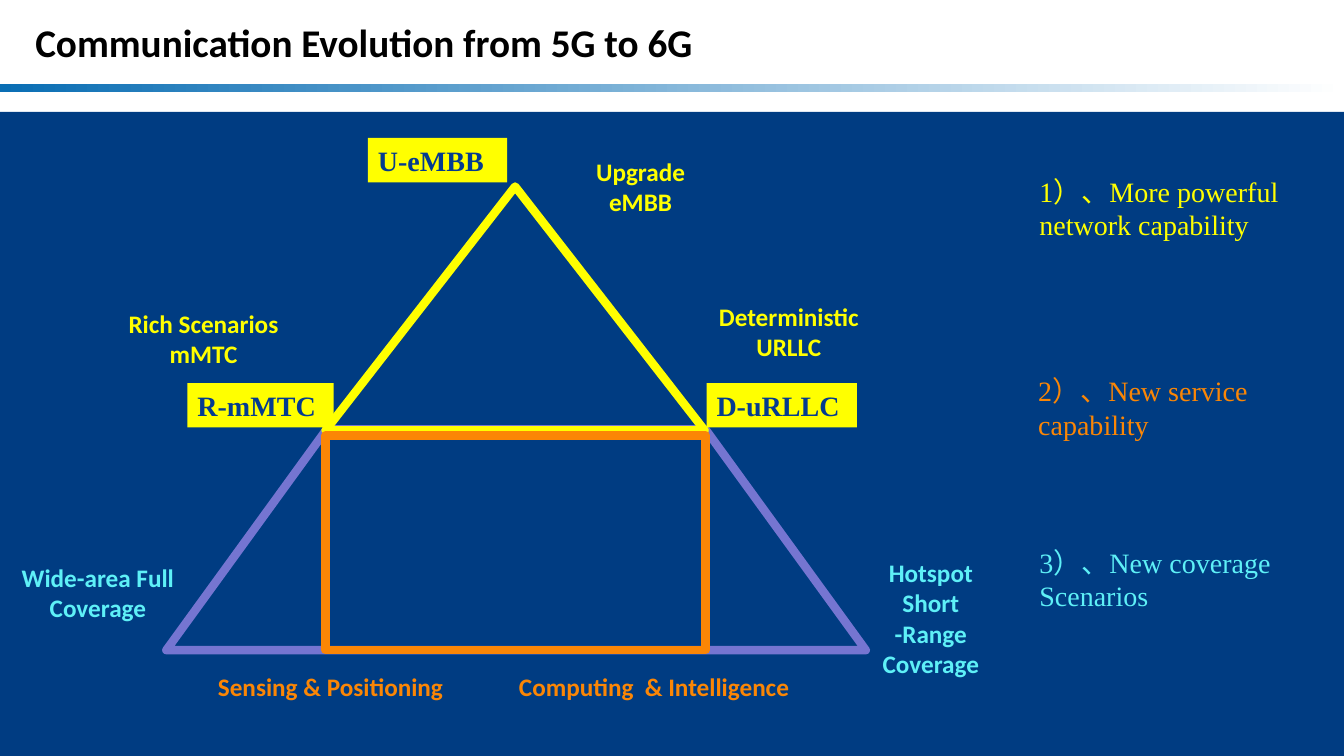
import pptx
import pptx.util
import pptx.dml.color
import pptx.enum.shapes
import pptx.enum.text

Pt = pptx.util.Pt
RGBColor = pptx.dml.color.RGBColor
Shape = pptx.enum.shapes.MSO_SHAPE
Align = pptx.enum.text.PP_ALIGN
Anchor = pptx.enum.text.MSO_ANCHOR
AutoSize = pptx.enum.text.MSO_AUTO_SIZE

BLACK = RGBColor(0x00, 0x00, 0x00)
WHITE = RGBColor(0xFF, 0xFF, 0xFF)
BAND_BLUE = RGBColor(0x0A, 0x6E, 0xB4)
PANEL_BLUE = RGBColor(0x00, 0x3C, 0x82)
TAG_BLUE = RGBColor(0x04, 0x3B, 0x90)
YELLOW = RGBColor(0xFF, 0xFF, 0x00)
ORANGE = RGBColor(0xFB, 0x86, 0x05)
CYAN = RGBColor(0x5E, 0xF0, 0xF7)
PURPLE = RGBColor(0x75, 0x75, 0xD1)

TITLE_FONT = {"name": "Calibri", "size": Pt(28), "bold": True}
LABEL_FONT = {"name": "Calibri", "size": Pt(18), "bold": True}
CAPABILITY_FONT = {"name": "Times New Roman", "size": Pt(20), "bold": False}
TAG_FONT = {"name": "Times New Roman", "size": Pt(20), "bold": True}

WIDE_INSETS = {"margin_left": Pt(9.4), "margin_right": Pt(9.4),
               "margin_top": Pt(5), "margin_bottom": Pt(5)}
TAG_INSETS = {"margin_left": Pt(7.2), "margin_right": Pt(7.2),
              "margin_top": Pt(3.6), "margin_bottom": Pt(3.6)}

SLIDE_SIZE = (960, 540)
HEADER_BOX = (0, 0, 960, 66)
DIAGRAM_BOX = (0, 80, 730, 460)
CAPABILITY_BOX = (732, 80, 228, 460)


def set_all(target, values):
    for name, value in values.items():
        setattr(target, name, value)


def within(box, left, top, width, height):
    """Turn a place inside box into slide lengths."""
    return Pt(box[0] + left), Pt(box[1] + top), Pt(width), Pt(height)


def write(frame, text, font, color, align, frame_format):
    set_all(frame, {"word_wrap": True, "auto_size": AutoSize.NONE, **frame_format})
    frame.text = text
    for paragraph in frame.paragraphs:
        paragraph.alignment = align
        for run in paragraph.runs:
            set_all(run.font, font)
            run.font.color.rgb = color


def add_plain_shape(slide, kind, place, fill=None, outline=None):
    shape = slide.shapes.add_shape(kind, *place)
    shape.shadow.inherit = False
    if fill is None:
        shape.fill.background()
    else:
        shape.fill.solid()
        shape.fill.fore_color.rgb = fill
    if outline is None:
        shape.line.fill.background()
    else:
        shape.line.color.rgb = outline
        shape.line.width = Pt(6)
    return shape


def add_text(slide, place, text, font, color, align):
    frame = slide.shapes.add_textbox(*place).text_frame
    write(frame, text, font, color, align, WIDE_INSETS)


def add_header(slide, box):
    """Title above a band that fades to white."""
    title = slide.shapes.title
    left, top, width, height = within(box, 18, 0, 722, 60)
    set_all(title, {"left": left, "top": top, "width": width, "height": height})
    write(title.text_frame, "Communication Evolution from 5G to 6G", TITLE_FONT,
          BLACK, Align.LEFT, {**TAG_INSETS, "vertical_anchor": Anchor.MIDDLE})

    band = add_plain_shape(slide, Shape.RECTANGLE, within(box, 0, 60, box[2], 6))
    band.fill.gradient()
    band.fill.gradient_angle = 0
    for stop, color in zip(band.fill.gradient_stops, (BAND_BLUE, WHITE)):
        stop.color.rgb = color


def add_diagram(slide, box):
    """5G triangle resting on the 6G trapezoid, with labels and tags."""
    coverage = add_plain_shape(slide, Shape.TRAPEZOID,
                               within(box, 118.8, 226.7, 499.7, 157.7), outline=PURPLE)
    coverage.adjustments[0] = 0.726
    add_plain_shape(slide, Shape.ISOSCELES_TRIANGLE,
                    within(box, 232.6, 53.2, 270.7, 174.2), outline=YELLOW)

    labels = [
        ("Deterministic\nURLLC", (491.8, 130.2, 143.3, 53.3), YELLOW),
        ("Rich Scenarios mMTC", (63.4, 135.3, 164, 53.3), YELLOW),
        ("Sensing & Positioning", (144, 394.5, 184.3, 31.7), ORANGE),
        ("Computing  & Intelligence", (343.4, 394.5, 247.7, 31.7), ORANGE),
        ("Wide-area Full Coverage", (5.8, 316.7, 128.2, 53.3), CYAN),
        ("Hotspot Short -Range Coverage", (612, 313.1, 105.8, 97.2), CYAN),
        ("Upgrade eMBB", (407.5, 26.6, 100.1, 53.3), YELLOW),
    ]
    for text, place, color in labels:
        add_text(slide, within(box, *place), text, LABEL_FONT, color, Align.CENTER)

    tags = [("U-eMBB", 262.8, 18.6, 99.4),
            ("R-mMTC", 133.9, 193.6, 104.4),
            ("D-uRLLC", 504.7, 193.6, 107.3)]
    for text, left, top, width in tags:
        tag = add_plain_shape(slide, Shape.RECTANGLE,
                              within(box, left, top, width, 31.7), fill=YELLOW)
        write(tag.text_frame, text, TAG_FONT, TAG_BLUE, Align.LEFT, TAG_INSETS)

    add_plain_shape(slide, Shape.RECTANGLE,
                    within(box, 232.6, 231, 271.4, 153.4), outline=ORANGE)


def add_capabilities(slide, box):
    capabilities = [
        ("1）、More powerful  network capability", 1, 39.5, YELLOW),
        ("2）、New service capability", 0.2, 182.1, ORANGE),
        ("3）、New coverage Scenarios", 1, 304.5, CYAN),
    ]
    for text, left, top, color in capabilities:
        add_text(slide, within(box, left, top, 204.5, 58.3), text,
                 CAPABILITY_FONT, color, Align.LEFT)


def main():
    deck = pptx.Presentation()
    deck.slide_width, deck.slide_height = map(Pt, SLIDE_SIZE)
    slide = deck.slides.add_slide(deck.slide_layouts[5])
    add_header(slide, HEADER_BOX)
    add_plain_shape(slide, Shape.RECTANGLE,
                    within((0, 80), 0, 0, 960, 460), fill=PANEL_BLUE)
    add_diagram(slide, DIAGRAM_BOX)
    add_capabilities(slide, CAPABILITY_BOX)
    deck.save("out.pptx")


if __name__ == "__main__":
    main()
